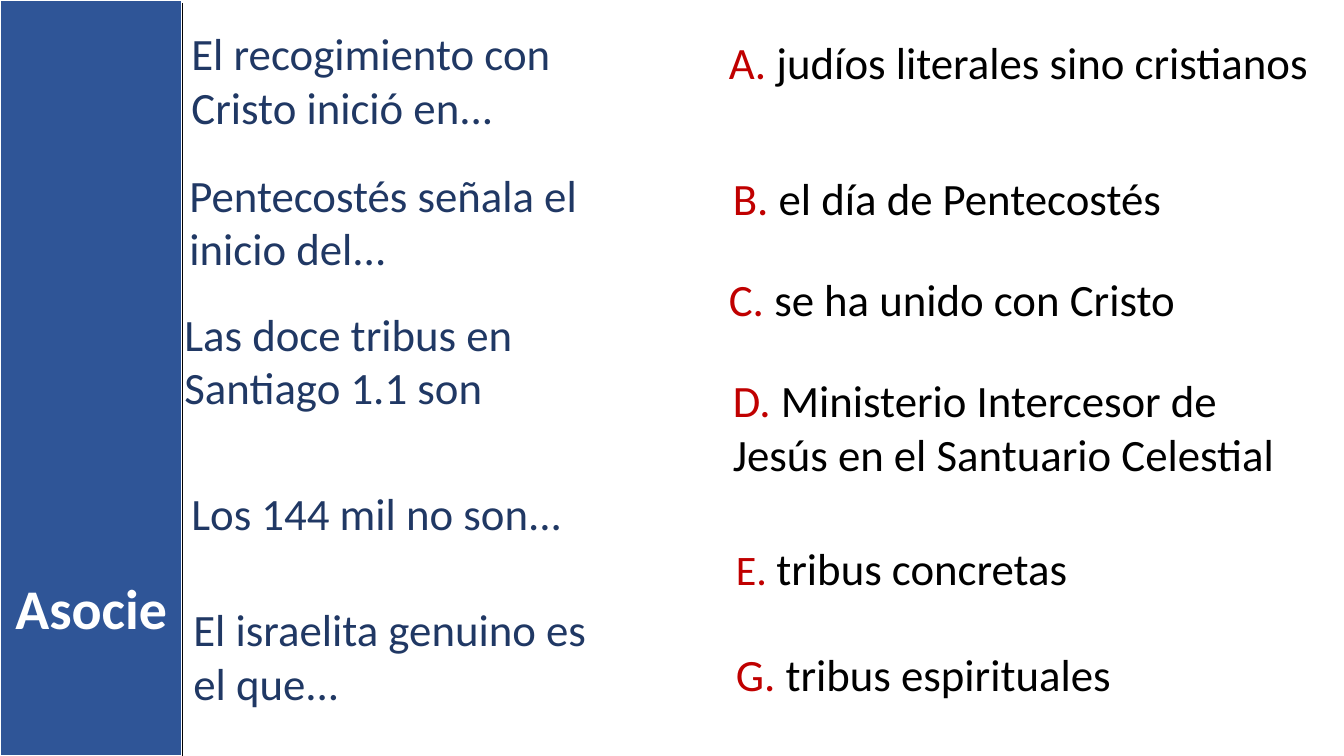
from dataclasses import dataclass

from lxml import etree
from pptx import Presentation
from pptx.dml.color import RGBColor
from pptx.enum.shapes import MSO_CONNECTOR, MSO_SHAPE
from pptx.enum.text import MSO_ANCHOR, MSO_AUTO_SIZE, PP_ALIGN
from pptx.oxml.ns import qn
from pptx.util import Inches, Pt

RECTANGLE = MSO_SHAPE.RECTANGLE
STRAIGHT = MSO_CONNECTOR.STRAIGHT
TOP = MSO_ANCHOR.TOP
GROW = MSO_AUTO_SIZE.SHAPE_TO_FIT_TEXT
LEFT = PP_ALIGN.LEFT
CENTER = PP_ALIGN.CENTER

SLIDE_WIDTH = Inches(13.33)
SLIDE_HEIGHT = Inches(7.5)
TITLE_ONLY = 5
BAND_SHARE = 13.58
LINE_HEIGHTS = {1: 8.53, 2: 15.73}


@dataclass(frozen=True)
class Theme:
    font: str = "Calibri"
    band: RGBColor = RGBColor(0x2F, 0x55, 0x97)
    prompt: RGBColor = RGBColor(0x20, 0x38, 0x64)
    letter: RGBColor = RGBColor(0xC0, 0x00, 0x00)
    answer: RGBColor = RGBColor(0x00, 0x00, 0x00)
    light: RGBColor = RGBColor(0xFF, 0xFF, 0xFF)
    title_size: int = 40
    text_size: int = 32
    small_letter_size: int = 30


THEME = Theme()

PROMPTS = [
    ("El recogimiento con Cristo inició en...", 13.5, 2.8, 33.23, 2),
    ("Pentecostés señala el inicio del...", 13.35, 21.47, 34.66, 2),
    ("Las doce tribus en Santiago 1.1 son", 12.98, 39.87, 30.83, 2),
    ("Los 144 mil no son...", 13.5, 63.6, 34.51, 1),
    ("El israelita genuino es el que...", 13.65, 78.93, 33.08, 2),
]

ANSWERS = [
    ("A", "judíos literales sino cristianos", 53.49, 3.87, 45.39, 1),
    ("B", "el día de Pentecostés", 53.79, 21.87, 44.41, 1),
    ("C", "se ha unido con Cristo", 53.49, 35.33, 43.06, 1),
    ("D", "Ministerio Intercesor de Jesús en el Santuario Celestial",
     53.79, 48.67, 43.51, 2),
    ("E", "tribus concretas", 54.01, 70.93, 41.49, 1),
    ("G", "tribus espirituales", 54.01, 84.93, 41.94, 1),
]


def across(percent):
    return round(SLIDE_WIDTH * percent / 100)


def down(percent):
    return round(SLIDE_HEIGHT * percent / 100)


def add_run(paragraph, text, color, size=THEME.text_size, bold=False):
    run = paragraph.add_run()
    run.text = text
    run.font.name = THEME.font
    run.font.size = Pt(size)
    run.font.bold = bold
    run.font.color.rgb = color


def prepare_frame(frame, alignment):
    frame.word_wrap = True
    frame.auto_size = GROW
    frame.vertical_anchor = TOP
    paragraph = frame.paragraphs[0]
    paragraph.alignment = alignment
    return paragraph


def add_entry(slide, left, top, width, lines):
    entry = slide.shapes.add_textbox(
        across(left), down(top), across(width), down(LINE_HEIGHTS[lines]))
    return prepare_frame(entry.text_frame, LEFT)


def add_prompt(slide, text, *place):
    add_run(add_entry(slide, *place), text, THEME.prompt)


def add_answer(slide, letter, text, *place):
    paragraph = add_entry(slide, *place)
    letter_size = THEME.small_letter_size if letter == "E" else THEME.text_size
    add_run(paragraph, f"{letter}. ", THEME.letter, letter_size)
    add_run(paragraph, text, THEME.answer)


def add_band(slide):
    band = slide.shapes.add_shape(
        RECTANGLE, 0, 0, across(BAND_SHARE), SLIDE_HEIGHT)
    band.shadow.inherit = False
    band.fill.solid()
    band.fill.fore_color.rgb = THEME.band
    band.line.color.rgb = THEME.light
    band.line.width = Pt(1.5)
    slide.shapes.element.insert(2, band.element)


def place_title(slide, text):
    title = slide.shapes.title
    title.left, title.top = 0, down(75.2)
    title.width, title.height = across(BAND_SHARE), down(10.27)
    paragraph = prepare_frame(title.text_frame, CENTER)
    add_run(paragraph, text, THEME.light, THEME.title_size, True)


def add_divider(slide):
    edge = across(BAND_SHARE)
    divider = slide.shapes.add_connector(
        STRAIGHT, edge, down(0.4), edge, SLIDE_HEIGHT)
    divider.line.color.rgb = THEME.answer
    divider.line.width = Pt(1)
    etree.SubElement(divider.element.spPr, qn("a:effectLst"))


def main():
    presentation = Presentation()
    presentation.slide_width = SLIDE_WIDTH
    presentation.slide_height = SLIDE_HEIGHT
    slide = presentation.slides.add_slide(
        presentation.slide_layouts[TITLE_ONLY])
    add_band(slide)
    place_title(slide, "Asocie")
    for prompt in PROMPTS:
        add_prompt(slide, *prompt)
    for answer in ANSWERS:
        add_answer(slide, *answer)
    add_divider(slide)
    presentation.save("out.pptx")


if __name__ == "__main__":
    main()
